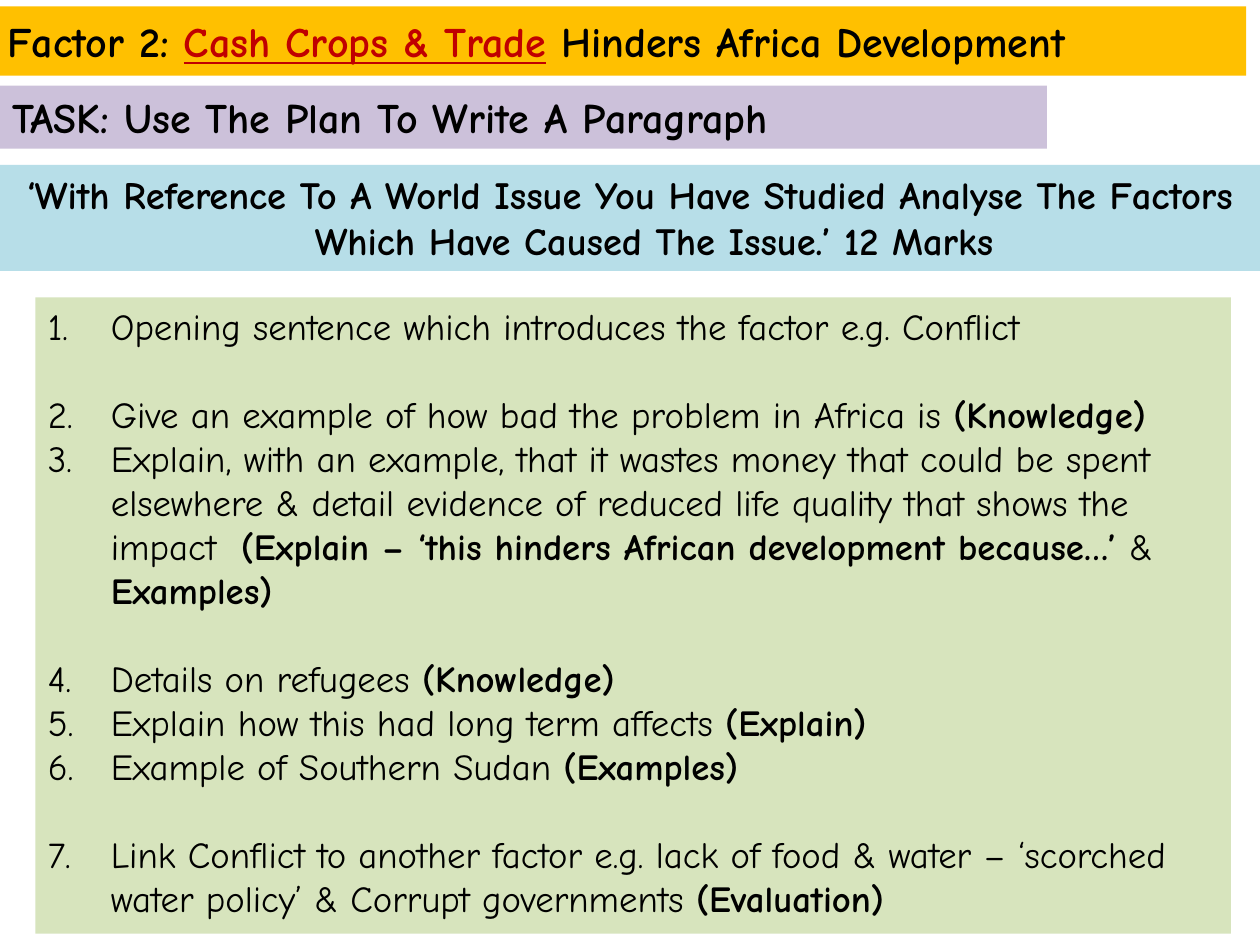
from pptx import Presentation
from pptx.dml.color import RGBColor
from pptx.enum.text import MSO_ANCHOR, MSO_AUTO_SIZE, PP_ALIGN
from pptx.util import Inches, Pt
from lxml.etree import SubElement
from pptx.oxml.ns import qn

THEME = {
    "font": "Comic Neue", "ink": "000000", "accent": "C00000",
    "title_fill": "FFC000", "task_fill": "CCC1DA",
    "question_fill": "B7DEE8", "plan_fill": "D7E4BD",
    "heading": 24, "question": 22, "plan": 21, "group_gap": 25,
}

# A run is (text, style); styles: "" plain, "b" bold, "a" bold underlined accent
TITLE = [("Factor 2: ", "b"), ("Cash Crops & Trade", "a"),
         (" Hinders Africa Development", "b")]
TASK = [("TASK: Use The Plan To Write A Paragraph", "b")]
QUESTION = [("‘With Reference To A World Issue You Have Studied Analyse The "
             "Factors Which Have Caused The Issue.’ 12 Marks", "b")]
PLAN_GROUPS = [
    [[("Opening sentence which introduces the factor e.g. Conflict", "")]],
    [
        [("Give an example of how bad the problem in Africa is ", ""),
         ("(Knowledge)", "b")],
        [("Explain, with an example, that it wastes money that could be spent "
          "elsewhere & detail evidence of reduced life quality that shows the "
          "impact  ", ""),
         ("(Explain – ‘this hinders African development because…’ ", "b"),
         ("&", ""), (" Examples)", "b")],
    ],
    [
        [("Details on refugees ", ""), ("(Knowledge)", "b")],
        [("Explain how this had long term affects ", ""), ("(Explain)", "b")],
        [("Example of Southern Sudan ", ""), ("(Examples)", "b")],
    ],
    [[("Link Conflict to another factor e.g. lack of food & water – ‘scorched "
       "water policy’ & Corrupt governments ", ""), ("(Evaluation)", "b")]],
]


def set_panel(sp, box, fill, anchor=MSO_ANCHOR.TOP):
    """Place a text shape, colour it and return its text frame."""
    sp.left, sp.top, sp.width, sp.height = map(Inches, box)
    sp.fill.solid()
    sp.fill.fore_color.rgb = RGBColor.from_string(THEME[fill])
    tf = sp.text_frame
    tf.word_wrap = True
    tf.auto_size = MSO_AUTO_SIZE.NONE
    tf.vertical_anchor = anchor
    return tf


def write(p, runs, size, align=PP_ALIGN.LEFT, before=0, hang=0, numbered=False):
    p.alignment = align
    p.space_before = Pt(before)
    pPr = p._p.get_or_add_pPr()
    pPr.set("marL", str(Inches(hang)))
    pPr.set("indent", str(-Inches(hang)))
    if numbered:
        SubElement(pPr, qn("a:buFont"), typeface="+mj-lt")
        SubElement(pPr, qn("a:buAutoNum"), type="arabicPeriod")
    for text, style in runs:
        r = p.add_run()
        r.text = text
        r.font.name = THEME["font"]
        r.font.size = Pt(THEME[size])
        r.font.bold = style != ""
        r.font.underline = style == "a"
        color = THEME["accent" if style == "a" else "ink"]
        r.font.color.rgb = RGBColor.from_string(color)


def main():
    prs = Presentation()
    prs.slide_width, prs.slide_height = Inches(10), Inches(7.5)
    s = prs.slides.add_slide(prs.slide_layouts[1])
    title, plan = s.placeholders

    tf = set_panel(title, (-0.04, 0.05, 9.93, 0.55), "title_fill", MSO_ANCHOR.MIDDLE)
    write(tf.paragraphs[0], TITLE, "heading")

    task = s.shapes.add_textbox(0, 0, 0, 0)
    tf = set_panel(task, (0, 0.68, 8.31, 0.5), "task_fill")
    write(tf.paragraphs[0], TASK, "heading")

    question = s.shapes.add_textbox(0, 0, 0, 0)
    tf = set_panel(question, (0, 1.31, 10, 0.84), "question_fill")
    write(tf.paragraphs[0], QUESTION, "question", align=PP_ALIGN.CENTER, hang=0.38)

    tf = set_panel(plan, (0.28, 2.36, 9.49, 5.05), "plan_fill")
    for g, group in enumerate(PLAN_GROUPS):
        for i, step in enumerate(group):
            p = tf.paragraphs[0] if g == i == 0 else tf.add_paragraph()
            gap = THEME["group_gap"] if g and i == 0 else 0
            write(p, step, "plan", before=gap, hang=0.5, numbered=True)

    prs.save("out.pptx")


if __name__ == "__main__":
    main()
